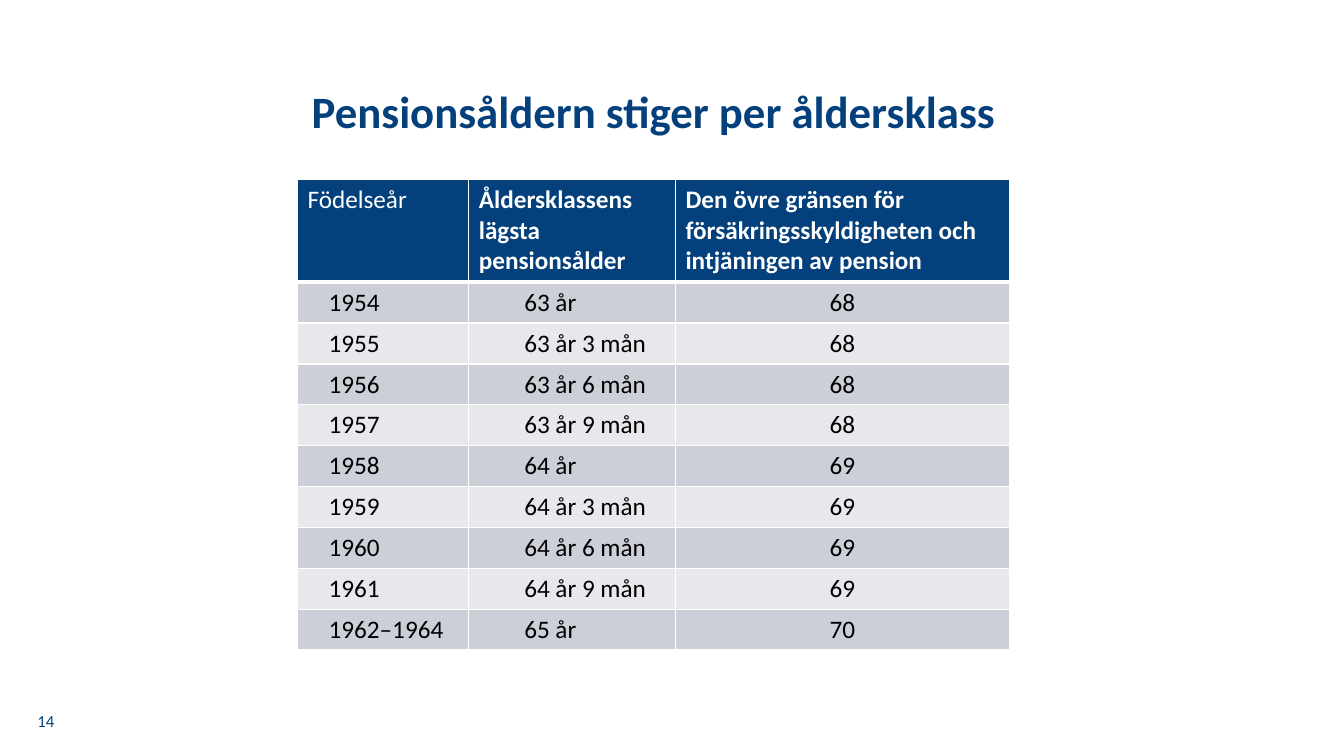
from dataclasses import dataclass

from lxml import etree
from pptx import Presentation
from pptx.dml.color import RGBColor
from pptx.enum.text import MSO_ANCHOR, PP_ALIGN
from pptx.oxml.ns import qn
from pptx.util import Inches, Pt

LEFT, CENTER = PP_ALIGN.LEFT, PP_ALIGN.CENTER
TOP, MIDDLE = MSO_ANCHOR.TOP, MSO_ANCHOR.MIDDLE


@dataclass(frozen=True)
class Theme:
    font: str = "Calibri"
    navy: str = "03407C"
    white: str = "FFFFFF"
    black: str = "000000"
    bands: tuple[str, str] = ("CCCFD7", "E7E8EC")
    title_size: int = 32
    table_size: int = 18
    number_size: int = 12
    rule: int = 1
    header_rule: int = 3


@dataclass(frozen=True)
class Column:
    heading: str
    width: float
    indent: float
    align: PP_ALIGN
    bold_heading: bool


THEME = Theme()
COLUMNS = [
    Column("Födelseår", 1.7, 0.31, LEFT, False),
    Column("Åldersklassens lägsta pensionsålder", 2.05, 0.55, LEFT, True),
    Column("Den övre gränsen för försäkringsskyldigheten och "
           "intjäningen av pension", 3.31, 0.1, CENTER, True),
]
AGE_CLASSES = [
    ("1954", "63 år", "68"),
    ("1955", "63 år 3 mån", "68"),
    ("1956", "63 år 6 mån", "68"),
    ("1957", "63 år 9 mån", "68"),
    ("1958", "64 år", "69"),
    ("1959", "64 år 3 mån", "69"),
    ("1960", "64 år 6 mån", "69"),
    ("1961", "64 år 9 mån", "69"),
    ("1962–1964", "65 år", "70"),
]
TABLE_LEFT, TABLE_TOP = 2.95, 1.78
HEADER_HEIGHT, BODY_HEIGHT = 1.02, 3.65


def write(tf, text: str, size: int, color: str, bold: bool = False,
          align: PP_ALIGN = LEFT) -> None:
    tf.text = text
    p = tf.paragraphs[0]
    p.alignment = align
    font = p.runs[0].font
    font.name, font.size, font.bold = THEME.font, Pt(size), bold
    font.color.rgb = RGBColor.from_string(color)


def set_borders(cell, bottom: int, top: int) -> None:
    """Put white rules on all four sides, ahead of the cell fill."""
    tc_pr = cell._tc.get_or_add_tcPr()
    widths = {"a:lnL": THEME.rule, "a:lnR": THEME.rule, "a:lnT": top, "a:lnB": bottom}
    for i, (tag, width) in enumerate(widths.items()):
        ln = etree.Element(qn(tag), w=str(Pt(width)))
        fill = etree.SubElement(ln, qn("a:solidFill"))
        etree.SubElement(fill, qn("a:srgbClr"), val=THEME.white)
        tc_pr.insert(i, ln)


def fill_cell(cell, color: str, top: int, bottom: int) -> None:
    cell.fill.solid()
    cell.fill.fore_color.rgb = RGBColor.from_string(color)
    set_borders(cell, bottom, top)


def add_title(slide) -> None:
    sp = slide.shapes.title
    sp.left, sp.top = Inches(0), Inches(0.84)
    sp.width, sp.height = Inches(12.97), Inches(0.68)
    tf = sp.text_frame
    tf.vertical_anchor = TOP
    write(tf, "Pensionsåldern stiger per åldersklass",
          THEME.title_size, THEME.navy, True, CENTER)
    tf.paragraphs[0].line_spacing = 0.9


def add_age_table(slide) -> None:
    width = sum(col.width for col in COLUMNS)
    table = slide.shapes.add_table(
        len(AGE_CLASSES) + 1, len(COLUMNS), Inches(TABLE_LEFT), Inches(TABLE_TOP),
        Inches(width), Inches(HEADER_HEIGHT + BODY_HEIGHT)).table
    table.rows[0].height = Inches(HEADER_HEIGHT)

    # Header row
    for c, col in enumerate(COLUMNS):
        table.columns[c].width = Inches(col.width)
        cell = table.cell(0, c)
        write(cell.text_frame, col.heading, THEME.table_size, THEME.white,
              col.bold_heading)
        fill_cell(cell, THEME.navy, THEME.rule, THEME.header_rule)

    # One banded row per age class
    for r, values in enumerate(AGE_CLASSES, start=1):
        table.rows[r].height = Inches(BODY_HEIGHT / len(AGE_CLASSES))
        top = THEME.header_rule if r == 1 else THEME.rule
        for c, (col, value) in enumerate(zip(COLUMNS, values)):
            cell = table.cell(r, c)
            cell.margin_left = Inches(col.indent)
            write(cell.text_frame, value, THEME.table_size, THEME.black,
                  align=col.align)
            fill_cell(cell, THEME.bands[(r - 1) % 2], top, THEME.rule)


def add_page_number(slide) -> None:
    sp = slide.shapes.add_textbox(Inches(0.2), Inches(6.95), Inches(0.51), Inches(0.4))
    tf = sp.text_frame
    tf.word_wrap = True
    tf.vertical_anchor = MIDDLE
    write(tf, "14", THEME.number_size, THEME.navy, align=CENTER)


def main() -> None:
    prs = Presentation()
    prs.slide_width, prs.slide_height = Inches(13.33), Inches(7.5)
    slide = prs.slides.add_slide(prs.slide_layouts[5])
    add_title(slide)
    add_age_table(slide)
    add_page_number(slide)
    prs.save("out.pptx")


if __name__ == "__main__":
    main()
